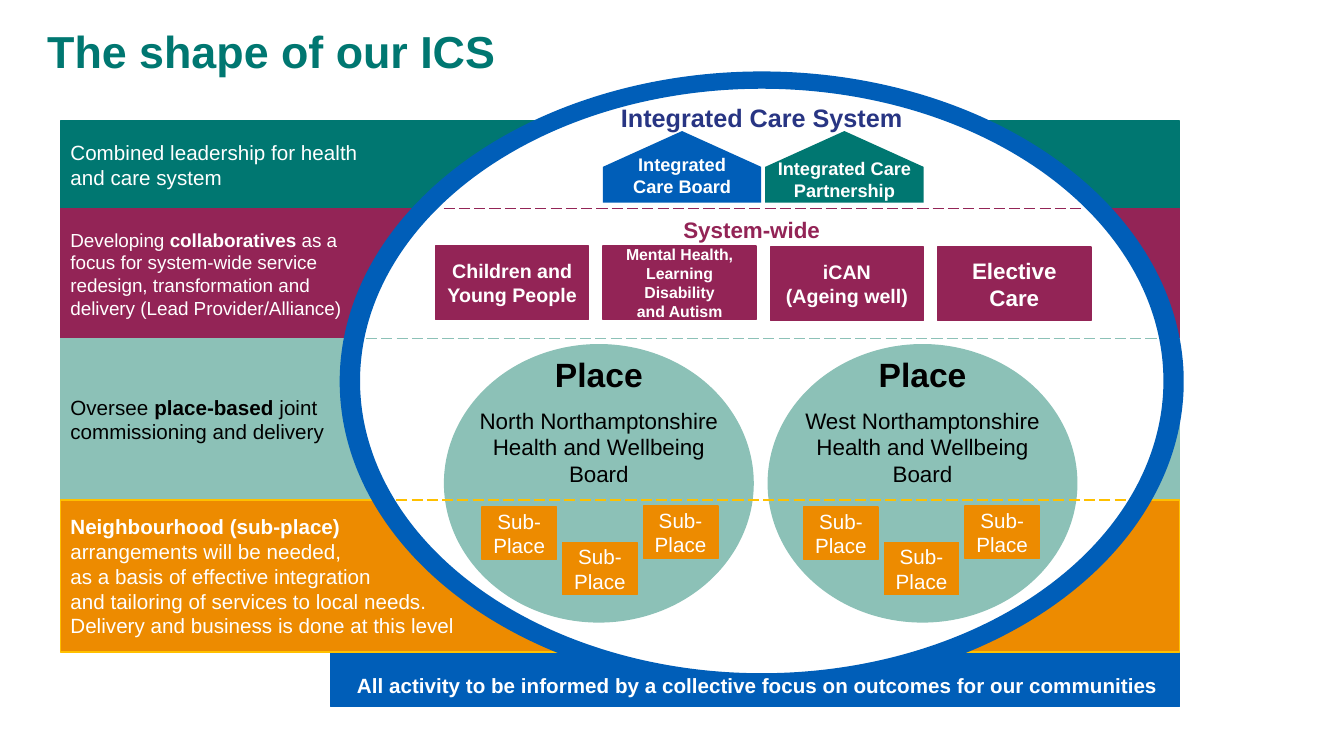
from lxml import etree
from pptx import Presentation
from pptx import util as u
from pptx.dml.color import RGBColor
from pptx.enum import dml, shapes, text
from pptx.oxml.ns import qn

COLORS = {"teal": "007771", "blue": "005EB8", "plum": "932456", "mint": "8CC1B7",
          "orange": "ED8B00", "gold": "FFC000", "navy": "283583",
          "white": "FFFFFF", "black": "000000"}

# Lines are separated by \n; words between asterisks are bold.
TITLE = "The shape of our ICS"
FOOTER = "*All activity to be informed by a collective focus on outcomes for our communities*"
# text, size, text colour, fill, outline, top, height
BANDS = [
    ("Combined leadership for health\nand care system",
     14.7, "white", "teal", "teal", 1.2, 0.87),
    ("Developing *collaboratives* as a\nfocus for system-wide service\n"
     "redesign, transformation and\ndelivery (Lead Provider/Alliance)",
     13.5, "white", "plum", "plum", 2.07, 1.29),
    ("Oversee *place-based* joint\ncommissioning and delivery",
     14.7, "black", "mint", "mint", 3.36, 1.6),
    ("*Neighbourhood (sub-place)*\narrangements will be needed,\n"
     "as a basis of effective integration\nand tailoring of services to local needs.\n"
     "Delivery and business is done at this level",
     14.7, "white", "orange", "gold", 4.96, 1.51),
]
# text, fill, left, label top
BODIES = [("*Integrated*\n*Care Board*", "blue", 5.98, 1.38),
          ("*Integrated Care*\n*Partnership*", "teal", 7.59, 1.42)]
# text, size, top
COLLABORATIVES = [("*Children and Young People*", 14, 2.44),
                  ("*Mental Health, Learning Disability*\n*and Autism*", 11.3, 2.44),
                  ("*iCAN*\n*(Ageing well)*", 14, 2.45),
                  ("*Elective*\n*Care*", 16, 2.45)]
# text, left of circle, left of first sub-place
PLACES = [("North Northamptonshire\nHealth and Wellbeing\nBoard", 4.41, 4.78),
          ("West Northamptonshire\nHealth and Wellbeing\nBoard", 7.62, 7.97)]
SUB_PLACE_TOPS = [5.03, 5.38, 5.02]
# colour, left, right, top
DIVIDERS = [("plum", 4.4, 10.75, 2.07), ("mint", 3.63, 11.49, 3.36),
            ("gold", 3.93, 11.18, 4.96)]

KINDS = shapes.MSO_SHAPE
ALIGN = text.PP_ALIGN

prs = Presentation()
prs.slide_width, prs.slide_height = u.Inches(13.33), u.Inches(7.5)
slide = prs.slides.add_slide(prs.slide_layouts[6])


def rgb(name):
    return RGBColor.from_string(COLORS[name])


def write(sp, content, size, color, align=ALIGN.CENTER, inset=0.1):
    tf = sp.text_frame
    frame = {"word_wrap": True, "vertical_anchor": text.MSO_ANCHOR.MIDDLE,
             "margin_left": u.Inches(inset), "margin_right": u.Inches(inset),
             "margin_top": 0, "margin_bottom": 0}
    for name, value in frame.items():
        setattr(tf, name, value)
    for i, line in enumerate(content.split("\n")):
        p = tf.add_paragraph() if i else tf.paragraphs[0]
        p.alignment = align
        for j, part in enumerate(line.split("*")):
            if not part:
                continue
            r = p.add_run()
            r.text = part
            for name, value in {"name": "Arial", "size": u.Pt(size),
                                "bold": j % 2 == 1}.items():
                setattr(r.font, name, value)
            r.font.color.rgb = rgb(color)


def add_shape(kind, box, fill, line=None, width=1):
    sp = slide.shapes.add_shape(kind, *map(u.Inches, box))
    sp.shadow.inherit = False
    sp.fill.solid()
    sp.fill.fore_color.rgb = rgb(fill)
    if line:
        sp.line.color.rgb = rgb(line)
        sp.line.width = u.Pt(width)
    else:
        sp.line.fill.background()
    return sp


def add_label(box, content, size, color, **layout):
    write(slide.shapes.add_textbox(*map(u.Inches, box)), content, size, color, **layout)


def add_divider(color, left, right, top):
    line = slide.shapes.add_connector(
        shapes.MSO_CONNECTOR.STRAIGHT, *map(u.Inches, (left, top, right, top)))
    line.line.color.rgb = rgb(color)
    line.line.width = u.Pt(1)
    line.line.dash_style = dml.MSO_LINE.LONG_DASH
    etree.SubElement(line._element.spPr, qn("a:effectLst"))


def add_place(content, left, first_sub):
    add_shape(KINDS.OVAL, (left, 3.42, 3.06, 2.75), "mint", "mint")
    add_label((left, 3.59, 3.06, 0.25), "*Place*", 24, "black")
    add_label((left, 4.08, 3.06, 0.71), content, 16, "black")
    for i, top in enumerate(SUB_PLACE_TOPS):
        sp = add_shape(KINDS.RECTANGLE, (first_sub + 0.8 * i, top, 0.74, 0.52),
                       "orange", "orange")
        write(sp, "Sub-Place", 14.7, "white", inset=0.05)


add_label((0.37, 0.18, 9.68, 0.64), f"*{TITLE}*", 32, "teal", align=ALIGN.LEFT)
add_shape(KINDS.RECTANGLE, (3.28, 6.48, 8.42, 0.53), "blue", "blue")
for content, size, color, fill, line, top, height in BANDS:
    band = add_shape(KINDS.RECTANGLE, (0.6, top, 11.1, height), fill, line)
    write(band, content, size, color, align=ALIGN.LEFT)

add_shape(KINDS.OVAL, (3.39, 0.73, 8.33, 6.11), "blue", "blue", 3)
add_shape(KINDS.OVAL, (3.55, 0.86, 8.01, 5.84), "white", "blue", 3)

for place in PLACES:
    add_place(*place)
for i, (content, size, top) in enumerate(COLLABORATIVES):
    sp = add_shape(KINDS.RECTANGLE, (4.32 + 1.66 * i, top, 1.52, 0.73), "plum", "plum")
    write(sp, content, size, "white")
for divider in DIVIDERS:
    add_divider(*divider)

add_label((5.96, 1, 3.19, 0.32), "*Integrated Care System*", 18, "navy")
add_label((5.86, 2.12, 3.19, 0.32), "*System-wide*", 16, "plum")
add_label((3.29, 6.64, 8.44, 0.32), FOOTER, 14.7, "white")
for content, fill, left, top in BODIES:
    # Turned a quarter, the pentagon is 1.57 wide and 0.71 high.
    house = add_shape(KINDS.PENTAGON, (left + 0.43, 0.87, 0.71, 1.57), fill)
    house.rotation = 270
    add_label((left, top, 1.57, 0.71), content, 13, "white")

prs.save("out.pptx")
